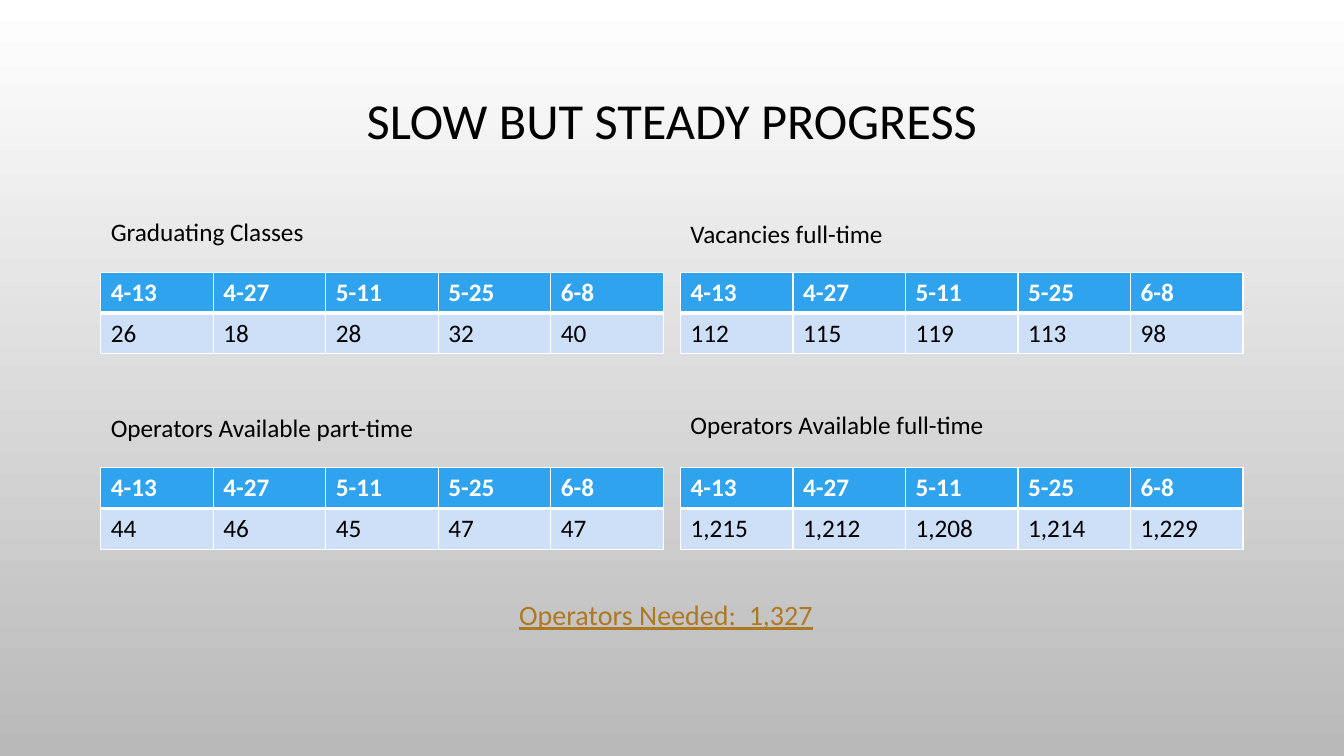
from lxml import etree
from pptx import Presentation
from pptx.dml.color import RGBColor
from pptx.enum import text as t
from pptx.oxml import ns
from pptx.util import Inches, Pt

COLORS = {
    "black": "000000",
    "white": "FFFFFF",
    "gray": "B9B9B9",
    "header": "2FA3EE",
    "body": "CDE0F8",
    "gold": "AF7823",
}
DATES = ["4-13", "4-27", "5-11", "5-25", "6-8"]
PANEL_WIDTH = 5.58
ROW_HEIGHT = 0.405
PANELS = [
    ("Graduating Classes", 1, 2.1, 2.7, ["26", "18", "28", "32", "40"]),
    ("Vacancies full-time", 6.75, 2.12, 2.7, ["112", "115", "119", "113", "98"]),
    ("Operators Available part-time", 1, 4.04, 4.64, ["44", "46", "45", "47", "47"]),
    ("Operators Available full-time", 6.75, 4.01, 4.64,
     ["1,215", "1,212", "1,208", "1,214", "1,229"]),
]


def write(frame, content, size=18, color="black", bold=False, underline=False,
          align=t.PP_ALIGN.LEFT):
    frame.word_wrap = True
    paragraph = frame.paragraphs[0]
    paragraph.alignment = align
    run = paragraph.add_run()
    run.text = content
    run.font.name = "Calibri"
    run.font.size = Pt(size)
    run.font.bold = bold
    run.font.underline = underline
    run.font.color.rgb = RGBColor.from_string(COLORS[color])


def add_border(cell, side, width):
    properties = cell._tc.get_or_add_tcPr()
    line = etree.SubElement(properties, ns.qn(f"a:ln{side}"), w=str(Pt(width)))
    fill = etree.SubElement(line, ns.qn("a:solidFill"))
    etree.SubElement(fill, ns.qn("a:srgbClr"), val=COLORS["white"])


prs = Presentation()
prs.slide_width = Inches(13.33)
prs.slide_height = Inches(7.5)
slide = prs.slides.add_slide(prs.slide_layouts[5])

backdrop = slide.background.fill
backdrop.gradient()
backdrop.gradient_angle = 270
for stop, position, shade in zip(backdrop.gradient_stops, (0, 1), ("white", "gray")):
    stop.position = position
    stop.color.rgb = RGBColor.from_string(COLORS[shade])

title = slide.shapes.title
title.left, title.top = Inches(1), Inches(0.68)
title.width, title.height = Inches(11.33), Inches(1.08)
title.text_frame.vertical_anchor = t.MSO_ANCHOR.MIDDLE
write(title.text_frame, "SLOW BUT STEADY PROGRESS", size=36, align=t.PP_ALIGN.CENTER)
title.text_frame.paragraphs[0].line_spacing = 0.9

for heading, left, heading_top, table_top, counts in PANELS:
    label = slide.shapes.add_textbox(
        Inches(left), Inches(heading_top), Inches(PANEL_WIDTH), Inches(0.4))
    write(label.text_frame, heading)

    table = slide.shapes.add_table(
        2, len(DATES), Inches(left), Inches(table_top),
        Inches(PANEL_WIDTH), Inches(2 * ROW_HEIGHT)).table
    table.horz_banding = False
    for row, values in enumerate((DATES, counts)):
        is_header = row == 0
        table.rows[row].height = Inches(ROW_HEIGHT)
        for column, value in enumerate(values):
            cell = table.cell(row, column)
            write(cell.text_frame, value, bold=is_header,
                  color="white" if is_header else "black")
            top, bottom = (1, 3) if is_header else (3, 1)
            for side, width in (("L", 1), ("R", 1), ("T", top), ("B", bottom)):
                add_border(cell, side, width)
            cell.fill.solid()
            cell.fill.fore_color.rgb = RGBColor.from_string(
                COLORS["header" if is_header else "body"])

needed = slide.shapes.add_textbox(Inches(5.05), Inches(5.88), Inches(3.24), Inches(0.44))
write(needed.text_frame, "Operators Needed:  1,327", size=20, color="gold", underline=True)

prs.save("out.pptx")
